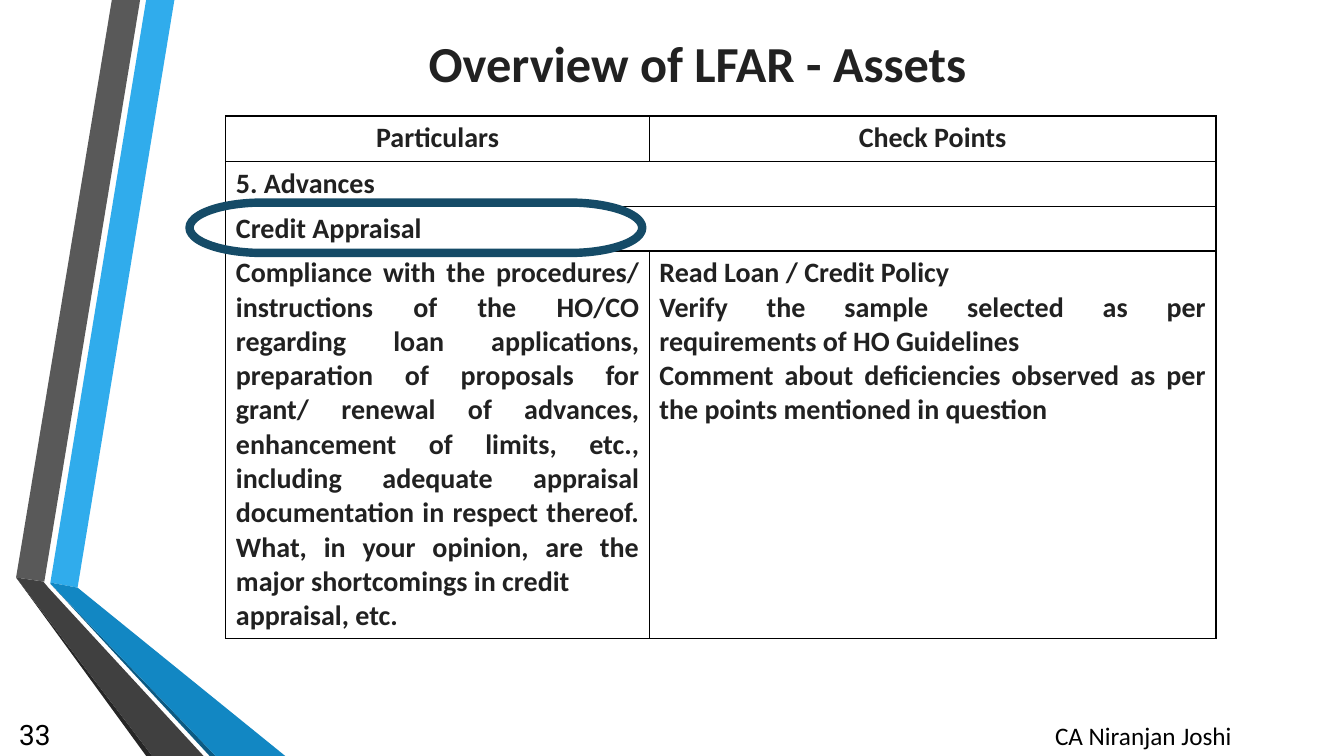
from pptx import Presentation
from pptx.dml.color import RGBColor
from pptx.enum.shapes import MSO_SHAPE
from pptx.enum.text import MSO_ANCHOR, PP_ALIGN
from pptx.oxml import parse_xml
from pptx.oxml.ns import nsdecls
from pptx.util import Inches, Pt

CENTER, LEFT, RIGHT, JUSTIFY = PP_ALIGN.CENTER, PP_ALIGN.LEFT, PP_ALIGN.RIGHT, PP_ALIGN.JUSTIFY
TOP, MIDDLE = MSO_ANCHOR.TOP, MSO_ANCHOR.MIDDLE

# Content
TITLE = "Overview of LFAR - Assets"
AUTHOR = "CA Niranjan Joshi"
PAGE = "33"
# Each row: alignment, then the paragraphs of each cell; one cell spans the row
ROWS = [
    (CENTER, [["Particulars"], ["Check Points"]]),
    (LEFT, [["5. Advances"]]),
    (JUSTIFY, [["Credit Appraisal"]]),
    (JUSTIFY, [
        ["Compliance with the procedures/ instructions of the HO/CO regarding loan "
         "applications, preparation of proposals for grant/ renewal of advances, "
         "enhancement of limits, etc., including adequate appraisal documentation in "
         "respect thereof. What, in your opinion, are the major shortcomings in credit",
         "appraisal, etc."],
        ["Read Loan / Credit Policy",
         "Verify the sample selected as per requirements of HO Guidelines",
         "Comment about deficiencies observed as per the points mentioned in question"],
    ]),
]
COL_WIDTHS = [4.2, 5.62]
ROW_HEIGHTS = [0.45, 0.45, 0.44, 3.84]

THEME = {
    "ink": "212121", "black": "000000", "ring": "154B67",
    "font": "Calibri", "number_font": "Roboto",
    "title": 36, "body": 20, "footer": 18,
}
# Ribbon facets: colour and corner points
RIBBONS = [
    ("30ACEC", [(0.5, 5.78), (0.77, 5.83), (1.73, 0), (1.45, 0)]),
    ("595959", [(1.39, 0), (1.11, 0), (0.16, 5.73), (0.44, 5.77)]),
    ("262626", [(0.16, 5.73), (1.45, 7.5), (1.51, 7.5)]),
    ("0C5A82", [(0.5, 5.79), (2.08, 7.5), (2.14, 7.5)]),
    ("1287C3", [(0.5, 5.79), (2.14, 7.5), (2.83, 7.5), (0.77, 5.83), (0.5, 5.78)]),
    ("404040", [(2.02, 7.5), (0.48, 5.83), (0.43, 5.77), (0.16, 5.73), (1.51, 7.5)]),
]


def color(name):
    return RGBColor.from_string(THEME.get(name, name))


def write(tf, lines, size, align, ink="ink", bold=False, font="font"):
    tf.text = "\n".join(lines)
    tf.word_wrap = True
    for p in tf.paragraphs:
        p.alignment = align
        for r in p.runs:
            r.font.name = THEME[font]
            r.font.size = Pt(THEME[size])
            r.font.bold = bold
            r.font.color.rgb = color(ink)


def add_label(s, box, text, size, align, anchor, font):
    tf = s.shapes.add_textbox(*map(Inches, box)).text_frame
    write(tf, [text], size, align, "black", font=font)
    tf.vertical_anchor = anchor


def add_borders(cell):
    tcPr = cell._tc.get_or_add_tcPr()
    for i, side in enumerate(("lnL", "lnR", "lnT", "lnB")):
        tcPr.insert(i, parse_xml(
            f'<a:{side} {nsdecls("a")} w="{Pt(1)}"><a:solidFill>'
            f'<a:srgbClr val="{THEME["black"]}"/></a:solidFill></a:{side}>'))


def add_ribbons(s):
    for fill, points in RIBBONS:
        corners = [(Inches(x), Inches(y)) for x, y in points]
        builder = s.shapes.build_freeform(*corners[0], scale=1.0)
        builder.add_line_segments(corners[1:], close=True)
        sp = builder.convert_to_shape()
        sp.shadow.inherit = False
        sp.fill.solid()
        sp.fill.fore_color.rgb = color(fill)
        sp.line.fill.background()


def add_checklist(s):
    table = s.shapes.add_table(
        len(ROWS), len(COL_WIDTHS), Inches(2.24), Inches(1.15),
        Inches(sum(COL_WIDTHS)), Inches(sum(ROW_HEIGHTS))).table
    table.first_row = table.horz_banding = False
    for col, width in zip(table.columns, COL_WIDTHS):
        col.width = Inches(width)
    for row, height in zip(table.rows, ROW_HEIGHTS):
        row.height = Inches(height)
    for i, (align, cells) in enumerate(ROWS):
        if len(cells) == 1:
            table.cell(i, 0).merge(table.cell(i, len(COL_WIDTHS) - 1))
        for j, lines in enumerate(cells):
            write(table.cell(i, j).text_frame, lines, "body", align, bold=True)
        for cell in table.rows[i].cells:
            cell.fill.background()
            add_borders(cell)


prs = Presentation()
prs.slide_width, prs.slide_height = Inches(13.33), Inches(7.5)
s = prs.slides.add_slide(prs.slide_layouts[5])

# Side ribbons
add_ribbons(s)

# Title
title = s.shapes.title
title.left, title.top, title.width, title.height = map(Inches, (2.42, 0.25, 9, 0.74))
write(title.text_frame, [TITLE], "title", CENTER, bold=True)
title.text_frame.vertical_anchor = MIDDLE

# Table
add_checklist(s)

# Footer
add_label(s, (9.59, 7.1, 3.5, 0.4), AUTHOR, "footer", CENTER, TOP, "font")
add_label(s, (0, 7.08, 0.6, 0.4), PAGE, "body", RIGHT, MIDDLE, "number_font")

# Ring around the credit appraisal heading
ring = s.shapes.add_shape(MSO_SHAPE.FLOWCHART_TERMINATOR,
                          *map(Inches, (1.88, 2.01, 4.49, 0.5)))
ring.shadow.inherit = False
ring.fill.background()
ring.line.color.rgb = color("ring")
ring.line.width = Pt(6)

prs.save("out.pptx")
